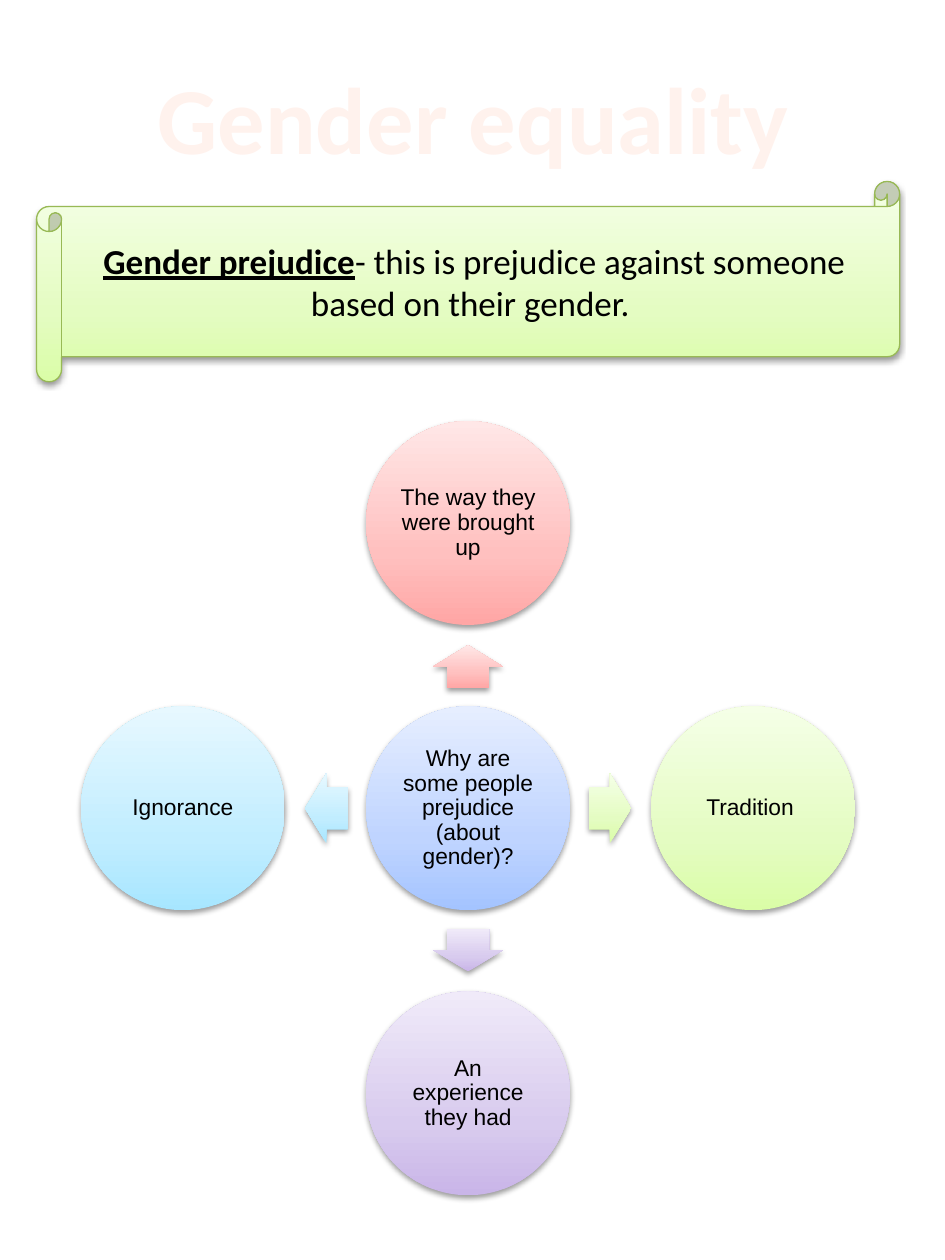
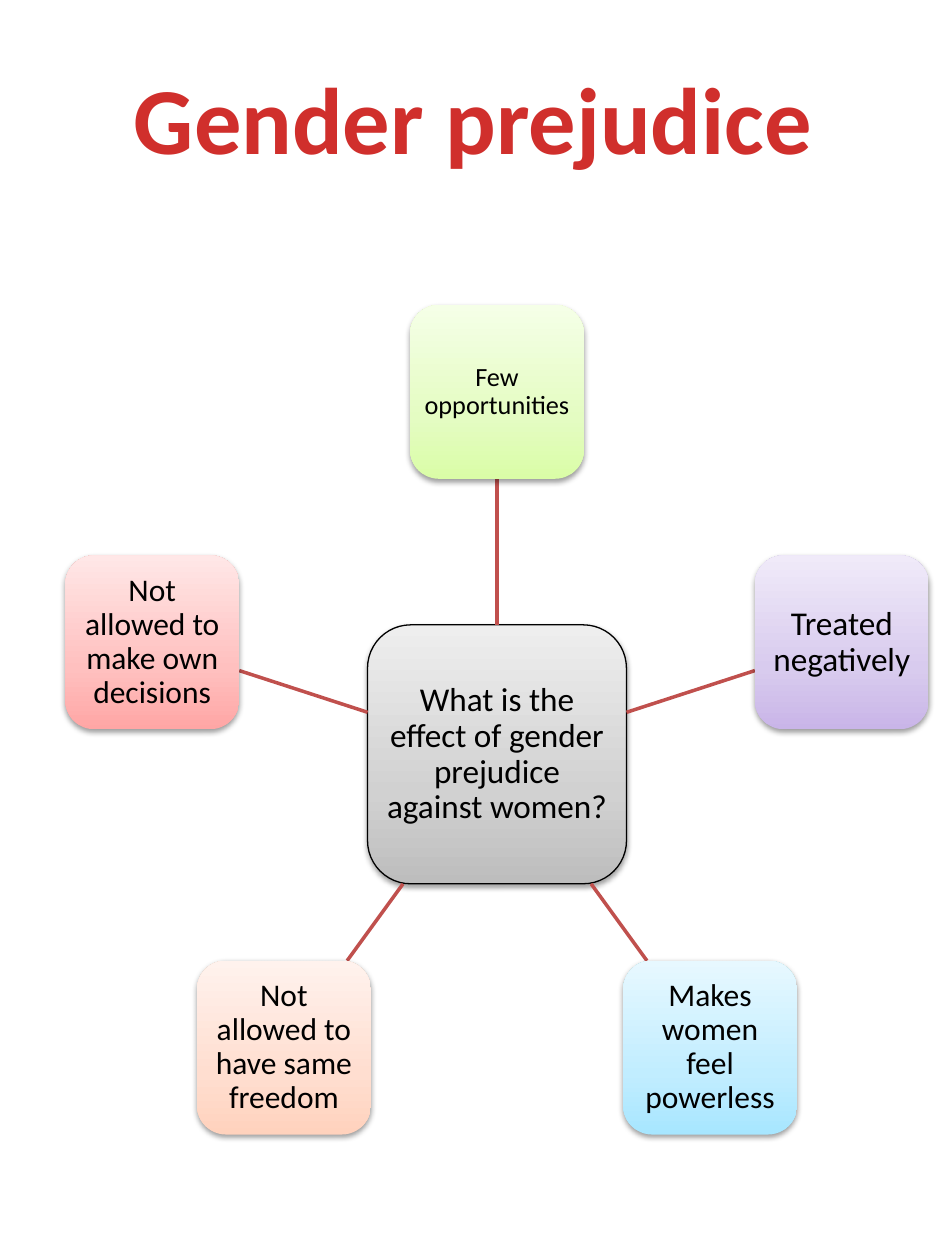
from math import cos, radians, sin

from pptx import Presentation
from pptx.dml.color import RGBColor
from pptx.enum.shapes import MSO_CONNECTOR, MSO_SHAPE
from pptx.enum.text import MSO_ANCHOR, MSO_AUTO_SIZE, PP_ALIGN
from pptx.oxml import parse_xml
from pptx.oxml.ns import nsdecls, qn
from pptx.util import Inches, Pt

OVAL, ROUND = MSO_SHAPE.OVAL, MSO_SHAPE.ROUNDED_RECTANGLE
ARROW, SCROLL = MSO_SHAPE.RIGHT_ARROW, MSO_SHAPE.HORIZONTAL_SCROLL
STRAIGHT = MSO_CONNECTOR.STRAIGHT
MIDDLE, CENTER = MSO_ANCHOR.MIDDLE, PP_ALIGN.CENTER
GROW = MSO_AUTO_SIZE.SHAPE_TO_FIT_TEXT

WIDE, HIGH = 7.5, 10
CELL = HIGH / 100
SANS, ARIAL = "Calibri", "Arial"
BLACK, CREAM, CRIMSON = "000000", "FFF2ED", "D02F2C"
OLIVE, BRICK = "98B955", "C0504D"
TINTS = {
    "blue": ("A4C4FF", "BFD4FF", "E6EEFF"),
    "red": ("FFA6A5", "FFC0BF", "FFE7E7"),
    "green": ("DAFDA7", "E4FCC2", "F5FFE7"),
    "purple": ("C9B5E8", "D8CBEE", "F0EAF9"),
    "aqua": ("A7E6FF", "C1EDFF", "E7F8FF"),
    "peach": ("FFD2BD", "FFDED0", "FFF2ED"),
    "gray": ("BDBDBD", "D1D1D1", "EEEEEE"),
}

TITLE = (9.3, 4.3, 56.5, 10.1)
BANNER = (2.9, 14.4, 68.5, 15.9)
CROSS = (6.4, 33.4, 61.5, 61.5)
STAR = (5.2, 24.2, 68.5, 65.8)

CAUSES = [
    ("The way they were brought up", "red", 270),
    ("Tradition ", "green", 0),
    ("An experience they had", "purple", 90),
    ("Ignorance", "aqua", 180),
]
EFFECTS = [
    ("Few opportunities", "green", 15),
    ("Treated negatively", "purple", 19),
    ("Makes women feel powerless", "aqua", 18),
    ("Not allowed to have same freedom", "peach", 18),
    ("Not allowed to make own decisions", "red", 18),
]


def color(code):
    """Turn a hex string into a colour."""
    return RGBColor.from_string(code)


def grid(*cells):
    """Turn grid cells into lengths."""
    return [Inches(cell * CELL) for cell in cells]


def shade(shape, tint):
    """Fill a shape with an upright three-stop gradient and a soft shadow."""
    props = shape._element.spPr
    stops = "".join(
        f'<a:gs pos="{pos * 1000}"><a:srgbClr val="{code}"/></a:gs>'
        for pos, code in zip((0, 35, 100), TINTS[tint]))
    fill = parse_xml(
        f'<a:gradFill {nsdecls("a")} rotWithShape="0"><a:gsLst>{stops}</a:gsLst>'
        '<a:lin ang="16200000" scaled="0"/></a:gradFill>')
    props.find(qn("a:prstGeom")).addnext(fill)
    shape.shadow.inherit = False
    props.find(qn("a:effectLst")).append(parse_xml(
        f'<a:outerShdw {nsdecls("a")} blurRad="40000" dist="20000" dir="5400000" '
        f'rotWithShape="0"><a:srgbClr val="{BLACK}"><a:alpha val="38000"/>'
        '</a:srgbClr></a:outerShdw>'))


def block(slide, kind, mid, size, tint, edge=None):
    """Add a shaded shape centred on a grid point."""
    (x, y), (w, h) = mid, size
    shape = slide.shapes.add_shape(kind, *grid(x - w / 2, y - h / 2, w, h))
    if edge:
        shape.line.color.rgb = color(edge)
        shape.line.width = Pt(0.75)
    else:
        shape.line.fill.background()
    shade(shape, tint)
    return shape


def write(shape, runs, size, font=SANS, ink=BLACK):
    """Write centred runs of (text, bold, underline) and return the paragraph."""
    para = shape.text_frame.paragraphs[0]
    para.alignment = CENTER
    for text, bold, under in runs:
        run = para.add_run()
        run.text = text
        run.font.name, run.font.size = font, Pt(size)
        run.font.bold, run.font.underline = bold, under
        run.font.color.rgb = color(ink)
    return para


def label(shape, text, size, font, inset):
    """Write a tight label in the middle of a diagram shape."""
    frame = shape.text_frame
    frame.word_wrap, frame.vertical_anchor = True, MIDDLE
    frame.margin_left = frame.margin_right = Inches(inset)
    frame.margin_top = frame.margin_bottom = Inches(inset)
    write(shape, [(text, False, False)], size, font).line_spacing = 0.9


def title(slide, box, text, ink):
    """Add the large slide title."""
    area = slide.shapes.add_textbox(*grid(*box))
    area.text_frame.word_wrap = False
    area.text_frame.auto_size = GROW
    write(area, [(text, True, False)], 54, ink=ink)


def banner(slide, box):
    """Add the scroll that holds the definition."""
    x, y, w, h = box
    scroll = block(slide, SCROLL, (x + w / 2, y + h / 2), (w, h), "green", OLIVE)
    scroll.text_frame.word_wrap = True
    scroll.text_frame.vertical_anchor = MIDDLE
    write(scroll, [
        ("Gender prejudice", True, True),
        ("- this is prejudice against someone based on their gender. ", False, False),
    ], 20)


def polar(mid, reach, angle):
    """Find the point at a distance and clockwise angle from a centre."""
    turn = radians(angle)
    return mid[0] + reach * cos(turn), mid[1] + reach * sin(turn)


def cross(slide, box, topic, items):
    """Add a hub circle with arrows out to four circles."""
    x, y, w, h = box
    mid = x + w / 2, y + h / 2
    disc = (0.263 * w, 0.263 * w)
    hub = block(slide, OVAL, mid, disc, "blue")
    label(hub, topic, 13, ARIAL, 0.02)
    for text, tint, angle in items:
        spot = polar(mid, 0.183 * w, angle)
        arrow = block(slide, ARROW, spot, (0.055 * w, 0.09 * w), tint)
        arrow.rotation = angle
        arrow.adjustments[0], arrow.adjustments[1] = 0.6, 0.5
        node = block(slide, OVAL, polar(mid, 0.368 * w, angle), disc, tint)
        label(node, text, 13, ARIAL, 0.02)


def spoke(slide, start, end):
    """Add a plain line between two grid points."""
    line = slide.shapes.add_connector(STRAIGHT, *grid(*start, *end))
    line.line.color.rgb = color(BRICK)
    line.line.width = Pt(2)
    line._element.spPr.append(parse_xml(f'<a:effectLst {nsdecls("a")}/>'))


def star(slide, box, topic, items):
    """Add a hub square with spokes out to evenly spread squares."""
    x, y, w, h = box
    core, side, reach = 0.3 * w, 0.2015 * w, 0.42 * w
    mid = x + w / 2, y + side / 2 + reach
    hub = block(slide, ROUND, mid, (core, core), "gray", BLACK)
    label(hub, topic, 19, SANS, 0.05)
    for i, (text, tint, size) in enumerate(items):
        angle = 360 / len(items) * i - 90
        ray = polar((0, 0), 1, angle)
        span = 2 * max(abs(ray[0]), abs(ray[1]))
        spoke(slide, polar(mid, core / span, angle),
              polar(mid, reach - side / span, angle))
        node = block(slide, ROUND, polar(mid, reach, angle), (side, side), tint)
        label(node, text, size, SANS, 0.04 if size < 18 else 0.05)


def main():
    """Build both slides and save them."""
    deck = Presentation()
    deck.slide_width, deck.slide_height = Inches(WIDE), Inches(HIGH)
    blank = deck.slide_layouts[6]

    first = deck.slides.add_slide(blank)
    title(first, TITLE, "Gender equality", CREAM)
    banner(first, BANNER)
    cross(first, CROSS, "Why are some people prejudice (about gender)?", CAUSES)

    second = deck.slides.add_slide(blank)
    title(second, TITLE, "Gender prejudice", CRIMSON)
    star(second, STAR, "What is the effect of gender prejudice against women?",
         EFFECTS)
    deck.save("out.pptx")


if __name__ == "__main__":
    main()
